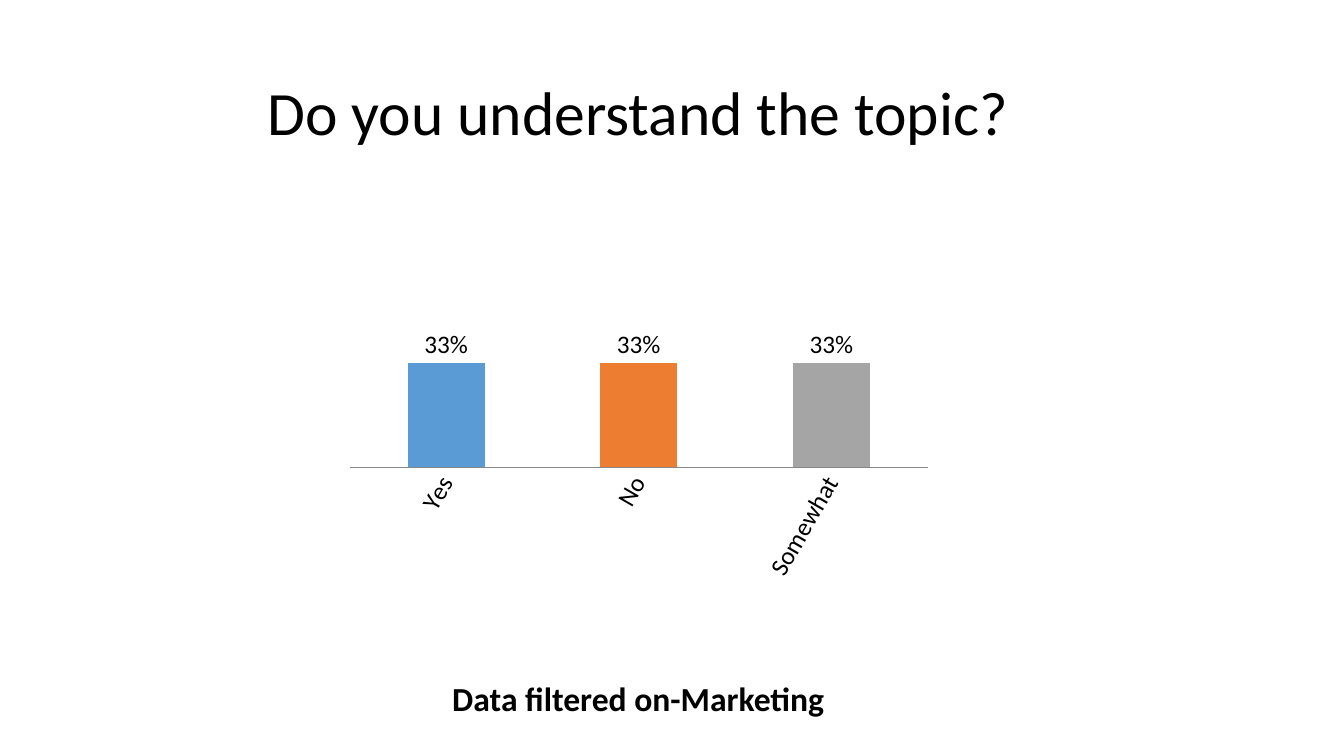
"""Build a survey result slide with a column chart of three answers."""
from pptx import Presentation
from pptx.chart.data import CategoryChartData
from pptx.dml.color import RGBColor
from pptx.enum.chart import XL_CHART_TYPE, XL_LABEL_POSITION, XL_TICK_LABEL_POSITION, XL_TICK_MARK
from pptx.enum.text import MSO_ANCHOR, PP_ALIGN
from pptx.oxml.ns import qn
from pptx.util import Inches, Pt

COLORS = {"text": "000000", "axis": "888888", "Yes": "5B9BD5", "No": "ED7D31", "Somewhat": "A5A5A5"}
ANSWERS = ["Yes", "No", "Somewhat"]
FONT = "Calibri"

prs = Presentation()
prs.slide_width, prs.slide_height = Inches(13.33), Inches(7.5)
col, row = prs.slide_width / 100, prs.slide_height / 100
s = prs.slides.add_slide(prs.slide_layouts[6])


def box(x, y, w, h):
    return [int(v) for v in (x * col, y * row, w * col, h * row)]


def style(font, size):
    font.name, font.size = FONT, Pt(size)
    font.color.rgb = RGBColor.from_string(COLORS["text"])


data = CategoryChartData(number_format="0%")
data.categories = ANSWERS
data.add_series("Series 1", [0.33] * len(ANSWERS))
chart = s.shapes.add_chart(XL_CHART_TYPE.COLUMN_CLUSTERED, *box(25.13, 19.07, 44.79, 58.93), data).chart
chart.has_legend = chart.has_title = False
style(chart.font, 18)

cat = chart.category_axis
cat.major_tick_mark = cat.minor_tick_mark = XL_TICK_MARK.NONE
cat.tick_label_position = XL_TICK_LABEL_POSITION.NEXT_TO_AXIS
cat.format.line.color.rgb = RGBColor.from_string(COLORS["axis"])
cat.format.line.width = Pt(0.25)
style(cat.tick_labels.font, 18)
cat._element.find(qn("c:txPr")).find(qn("a:bodyPr")).set("rot", str(-60 * 60000))

val = chart.value_axis
val.minimum_scale, val.maximum_scale = 0, 1
val.has_major_gridlines = False
val.visible = False

plot = chart.plots[0]
plot.gap_width = 150
plot.vary_by_categories = False
plot.has_data_labels = True
labels = plot.data_labels
labels.show_value = True
labels.number_format, labels.number_format_is_linked = "0%", False
labels.position = XL_LABEL_POSITION.OUTSIDE_END
style(labels.font, 18)
for i, answer in enumerate(ANSWERS):
    fill = plot.series[0].points[i].format.fill
    fill.solid()
    fill.fore_color.rgb = RGBColor.from_string(COLORS[answer])

for text, place, size, bold, anchor, spacing in [
    ("Do you understand the topic?", (4.35, 5.6, 86.27, 19.33), 44, False, MSO_ANCHOR.MIDDLE, 0.9),
    ("Data filtered on-Marketing", (12.15, 89.07, 70.67, 6.67), 24, True, MSO_ANCHOR.TOP, 1.0),
]:
    tf = s.shapes.add_textbox(*box(*place)).text_frame
    tf.word_wrap = True
    tf.vertical_anchor = anchor
    p = tf.paragraphs[0]
    p.alignment, p.line_spacing = PP_ALIGN.CENTER, spacing
    r = p.add_run()
    r.text = text
    r.font.bold = bold
    style(r.font, size)

prs.save("out.pptx")
